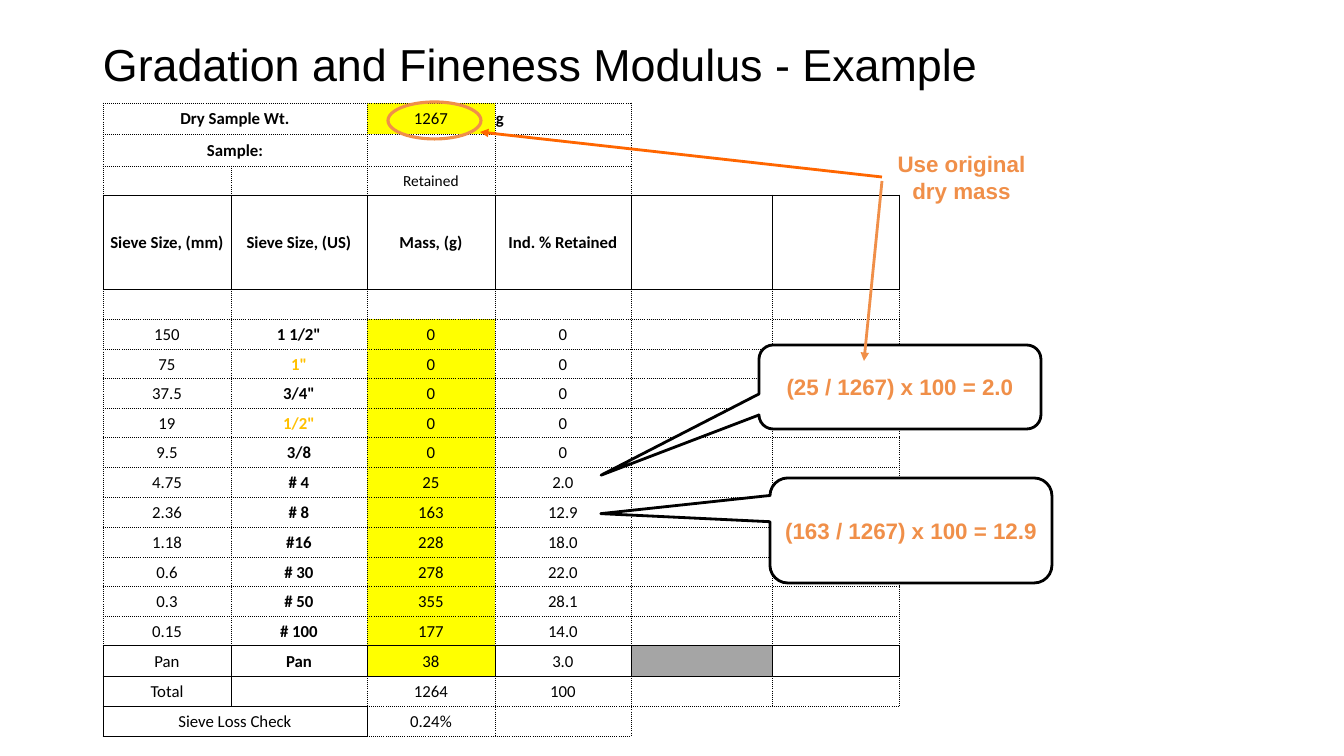
"""Build the gradation and fineness modulus example slide."""
from lxml import etree
from pptx import Presentation
from pptx.dml.color import RGBColor
from pptx.enum.shapes import MSO_CONNECTOR, MSO_SHAPE
from pptx.enum.text import MSO_ANCHOR, PP_ALIGN
from pptx.oxml.ns import qn
from pptx.util import Emu, Pt

CENTER, LEFT = PP_ALIGN.CENTER, PP_ALIGN.LEFT
MIDDLE = MSO_ANCHOR.MIDDLE
CALLOUT, OVAL = MSO_SHAPE.ROUNDED_RECTANGULAR_CALLOUT, MSO_SHAPE.OVAL
STRAIGHT = MSO_CONNECTOR.STRAIGHT
PX = 12192000 / 1344
BLACK, WHITE, YELLOW, GRAY = "000000", "FFFFFF", "FFFF00", "A5A5A5"
GOLD, ORANGE, BRIGHT_ORANGE = "FFC000", "F08F49", "FF6600"


def px(*lengths):
    return [Emu(round(n * PX)) for n in lengths]


def style(p, size, color, font="Arial", bold=False, align=CENTER):
    p.alignment = align
    p.font.size, p.font.name, p.font.bold = Pt(size), font, bold
    p.font.color.rgb = RGBColor.from_string(color)


prs = Presentation()
prs.slide_width, prs.slide_height = px(1344, 756)
s = prs.slides.add_slide(prs.slide_layouts[6])

rows = [
    ["Dry Sample Wt.", "", "1267", "g"],
    ["Sample:"],
    ["", "", "Retained"],
    ["Sieve Size, (mm)", "Sieve Size, (US)", "Mass, (g)", "Ind. % Retained"],
    [],
    ["150", '1 1/2"', "0", "0"],
    ["75", '1"', "0", "0"],
    ["37.5", '3/4"', "0", "0"],
    ["19", '1/2"', "0", "0"],
    ["9.5", "3/8", "0", "0"],
    ["4.75", "# 4", "25", "2.0"],
    ["2.36", "# 8", "163", "12.9"],
    ["1.18", "#16", "228", "18.0"],
    ["0.6", "# 30", "278", "22.0"],
    ["0.3", "# 50", "355", "28.1"],
    ["0.15", "# 100", "177", "14.0"],
    ["Pan", "Pan", "38", "3.0"],
    ["Total", "", "1264", "100"],
    ["Sieve Loss Check", "", "0.24%"],
]
widths = [128, 136, 128, 136, 141, 127]
heights = [31, 32, 29, 94, 30, 30, 30, 30, 29, 30, 30, 30, 30, 29, 30, 29, 31, 30, 30]
HEADER, PAN, TOTAL, LOSS = 3, 16, 17, 18

frame = s.shapes.add_table(len(rows), len(widths), *px(103, 103, sum(widths), sum(heights)))
table = frame.table
table.first_row = table.horz_banding = False
for column, width in zip(table.columns, px(*widths)):
    column.width = width
for row, height in zip(table.rows, px(*heights)):
    row.height = height
for r in (0, 1, LOSS):
    table.cell(r, 0).merge(table.cell(r, 1))

for r, texts in enumerate(rows):
    for c in range(len(widths)):
        cell = table.cell(r, c)
        cell.margin_left, cell.margin_top, cell.margin_right, cell.margin_bottom = px(1, 1, 1, 0)
        cell.vertical_anchor = MIDDLE
        text = texts[c] if c < len(texts) else ""
        p = cell.text_frame.paragraphs[0]
        if text:
            p.text = text
            bold = r in (0, 1, HEADER) and text != "1267" or 5 <= r <= PAN and c == 1
            color = GOLD if text in ('1"', '1/2"') else BLACK
            style(p, 11 if r == 2 else 12, color, "Calibri", bold, LEFT if text == "g" else CENTER)
        else:
            etree.SubElement(p._p, qn("a:endParaRPr"), sz="1200")

        edges = []
        for j in (c, c + 1):
            solid = r in (HEADER, PAN) or r == TOTAL and j < 2 or r == LOSS and j < 3
            edges.append((r in (0, 1, 2, LOSS) and j > 4, solid, 0.5))
        for i in (r, r + 1):
            solid = i in (HEADER, HEADER + 1, PAN, TOTAL) or i >= LOSS and c < 2
            edges.append((i in (0, 1, 2, LOSS + 1) and c > 3, solid, 1 if i == TOTAL else 0.5))
        for side, (hidden, solid, weight) in zip("LRTB", edges):
            ln = etree.SubElement(cell._tc.get_or_add_tcPr(), qn(f"a:ln{side}"), w=str(Pt(weight)))
            if hidden:
                etree.SubElement(ln, qn("a:noFill"))
                continue
            fill = etree.SubElement(ln, qn("a:solidFill"))
            etree.SubElement(fill, qn("a:srgbClr"), val=BLACK)
            etree.SubElement(ln, qn("a:prstDash"), val="solid" if solid else "sysDot")

        shade = YELLOW if c == 2 and (r == 0 or 5 <= r <= PAN) else GRAY if (r, c) == (PAN, 4) else None
        if shade:
            cell.fill.solid()
            cell.fill.fore_color.rgb = RGBColor.from_string(shade)
        else:
            cell.fill.background()

callouts = [
    ("(163 / 1267) x 100 = 12.9", (770, 478, 282, 105), (-1.1, -0.16, 0.17)),
    ("(25 / 1267) x 100 = 2.0", (759, 345, 282, 84), (-1.06, 1.05, 0.17)),
]
for text, box, adjustments in callouts:
    sp = s.shapes.add_shape(CALLOUT, *px(*box))
    sp.shadow.inherit = False
    for i, value in enumerate(adjustments):
        sp.adjustments[i] = value
    sp.fill.solid()
    sp.fill.fore_color.rgb = RGBColor.from_string(WHITE)
    sp.line.color.rgb = RGBColor.from_string(BLACK)
    sp.line.width = Pt(2)
    tf = sp.text_frame
    tf.word_wrap, tf.vertical_anchor = False, MIDDLE
    tf.text = text
    style(tf.paragraphs[0], 16, ORANGE, bold=True)

ring = s.shapes.add_shape(OVAL, *px(388, 102, 93, 37))
ring.shadow.inherit = False
ring.fill.background()
ring.line.color.rgb = RGBColor.from_string(ORANGE)
ring.line.width = Pt(2.25)

for ends, color in [((882, 177, 480, 132), BRIGHT_ORANGE), ((882, 181, 864, 361), ORANGE)]:
    arrow = s.shapes.add_connector(STRAIGHT, *px(*ends))
    arrow.line.color.rgb = RGBColor.from_string(color)
    arrow.line.width = Pt(2)
    etree.SubElement(arrow.line._get_or_add_ln(), qn("a:tailEnd"), type="triangle")
    etree.SubElement(arrow._element.spPr, qn("a:effectLst"))

note = s.shapes.add_textbox(*px(873, 145, 177, 65))
tf = note.text_frame
tf.word_wrap, tf.vertical_anchor = True, MIDDLE
tf.text = "Use original dry mass"
style(tf.paragraphs[0], 16, ORANGE, bold=True)

title = s.shapes.add_textbox(*px(93, 38, 1159, 66))
tf = title.text_frame
tf.word_wrap = True
tf.text = "Gradation and Fineness Modulus - Example"
style(tf.paragraphs[0], 32, BLACK, align=LEFT)
tf.paragraphs[0].line_spacing = 0.9

prs.save("out.pptx")
